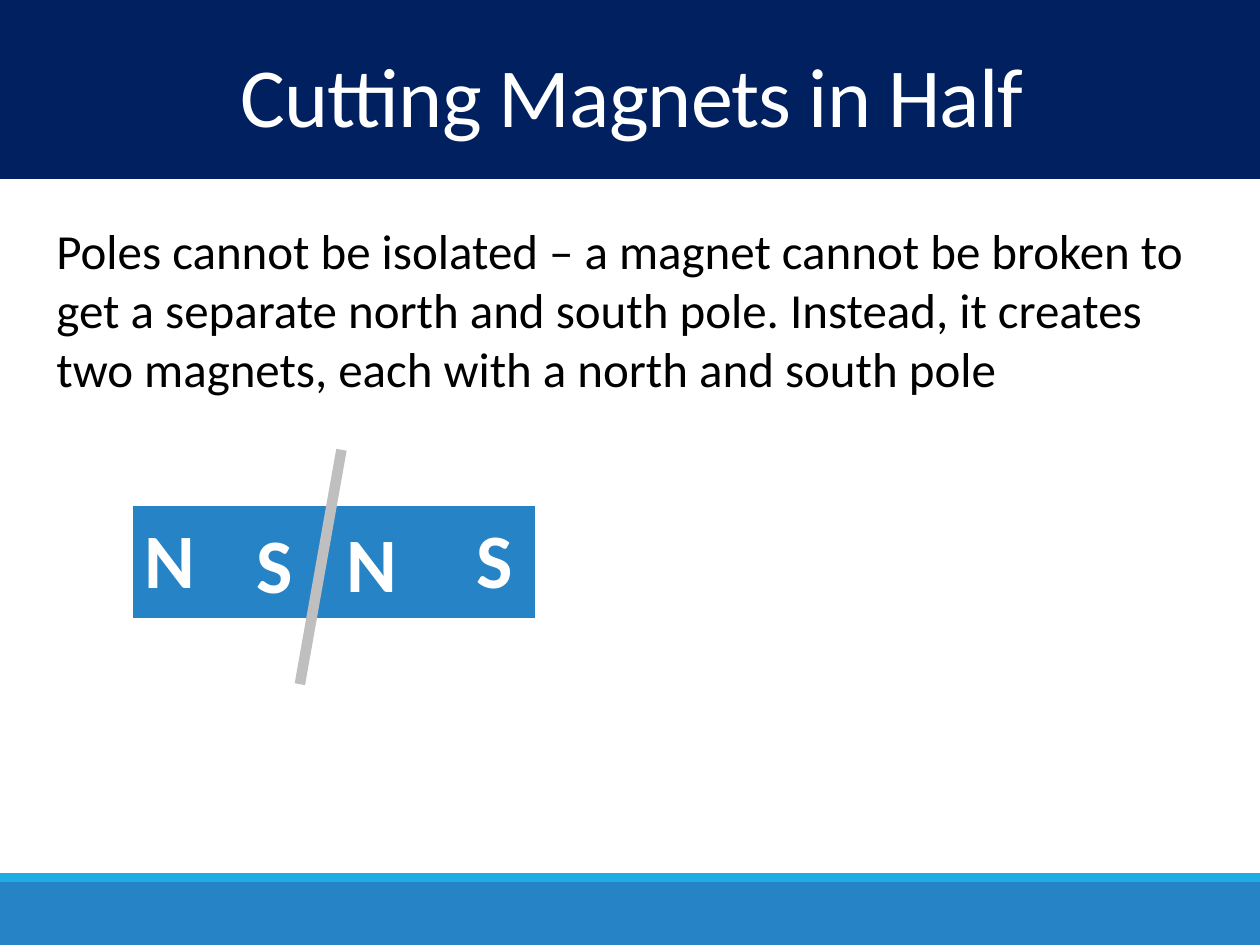
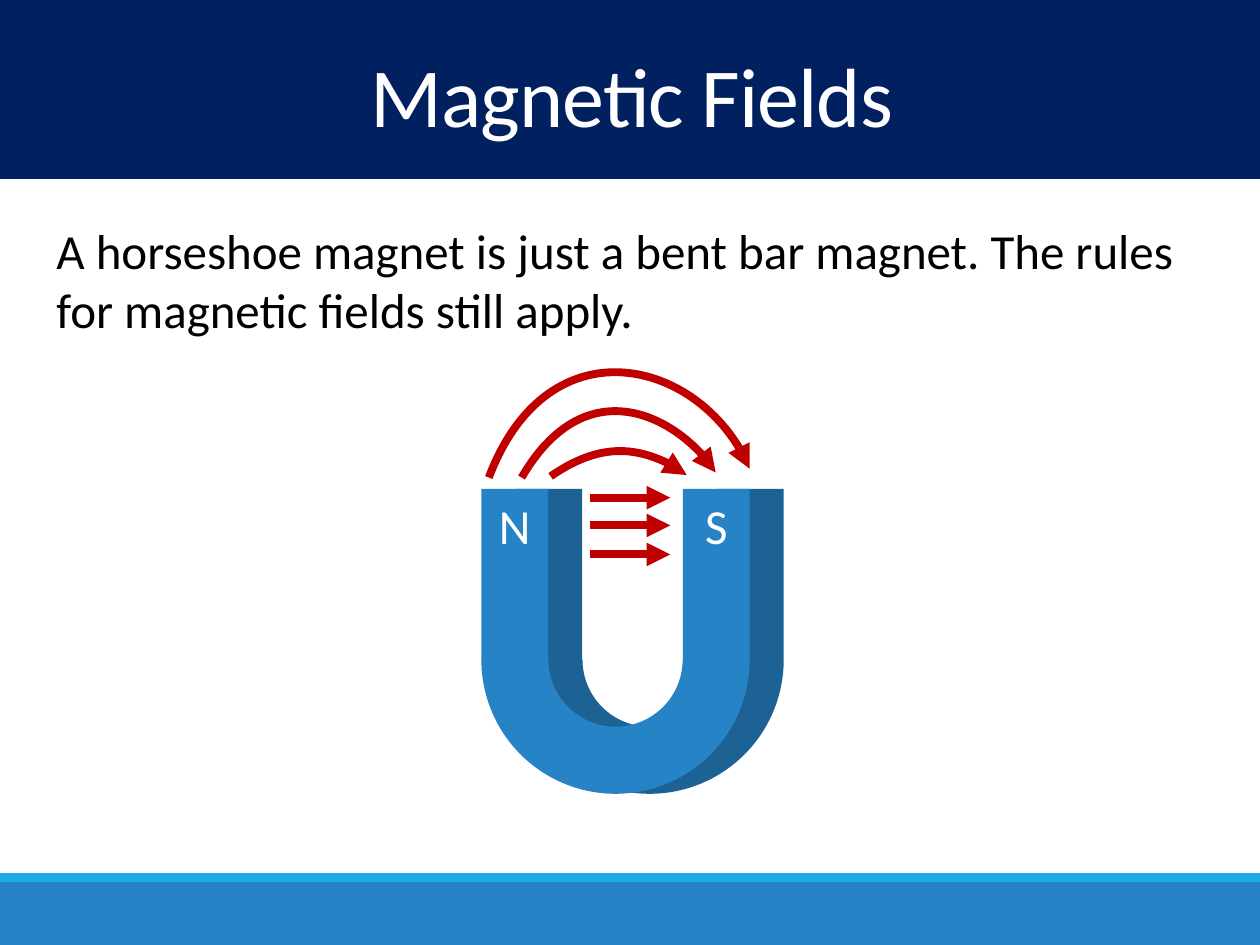
"""Builds two slides on cutting magnets in half and on magnetic fields."""
from dataclasses import dataclass

from lxml.etree import SubElement
from pptx import Presentation
from pptx.dml.color import RGBColor
from pptx.enum.shapes import MSO_CONNECTOR, MSO_SHAPE
from pptx.enum.text import MSO_ANCHOR, PP_ALIGN
from pptx.oxml import parse_xml
from pptx.oxml.ns import nsdecls, qn
from pptx.util import Emu, Pt

PX = 9144
WIDTH, HEIGHT = 1000, 750


@dataclass(frozen=True)
class Theme:
    font: str = "Calibri"
    navy: str = "002060"
    blue: str = "2683C6"
    shade: str = "1D6294"
    cyan: str = "1CADE4"
    cut: str = "BFBFBF"
    field: str = "C00000"
    white: str = "FFFFFF"
    black: str = "000000"
    title_size: int = 48
    pole_size: int = 44
    body_size: int = 28
    cut_width: float = 6
    field_width: float = 4.5


def px(*lengths):
    return [Emu(length * PX) for length in lengths]


class Deck:
    def __init__(self, theme):
        self.theme = theme
        self.file = Presentation()
        self.file.slide_width, self.file.slide_height = px(WIDTH, HEIGHT)
        self.slide = None

    def new_slide(self, title, body):
        theme = self.theme
        self.slide = self.file.slides.add_slide(self.file.slide_layouts[6])
        self.block((0, 700, WIDTH, 50), theme.blue)
        self.block((0, 693, WIDTH, 7), theme.cyan)
        self.block((0, 0, WIDTH, 142), theme.navy)
        heading = self.text((3, 42, 997, 84), title, theme.title_size, theme.white,
                            align=PP_ALIGN.CENTER)
        heading.line_spacing = 0.85
        heading.runs[0]._r.get_or_add_rPr().set("spc", "-50")
        self.text((35, 170, 924, 151), body, theme.body_size, theme.black)

    def add_words(self, paragraph, words, size, color, bold=False, align=PP_ALIGN.LEFT):
        paragraph.alignment = align
        run = paragraph.add_run()
        run.text = words
        run.font.name = self.theme.font
        run.font.size = Pt(size)
        run.font.bold = bold
        run.font.color.rgb = RGBColor.from_string(color)
        return paragraph

    def text(self, box, words, size, color, wrap=True, **style):
        frame = self.slide.shapes.add_textbox(*px(*box)).text_frame
        frame.word_wrap = wrap
        return self.add_words(frame.paragraphs[0], words, size, color, **style)

    def block(self, box, color, preset=MSO_SHAPE.RECTANGLE, turn=0, label=None):
        shape = self.slide.shapes.add_shape(preset, *px(*box))
        shape.shadow.inherit = False
        shape.rotation = turn
        shape.fill.solid()
        shape.fill.fore_color.rgb = RGBColor.from_string(color)
        shape.line.fill.background()
        if label:
            shape.text_frame.vertical_anchor = MSO_ANCHOR.TOP
            self.add_words(shape.text_frame.paragraphs[0], label, self.theme.body_size,
                           self.theme.white, align=PP_ALIGN.CENTER)

    def stroke(self, shape, color, width, arrow):
        shape.line.color.rgb = RGBColor.from_string(color)
        shape.line.width = Pt(width)
        if arrow:
            outline = shape._element.spPr.find(qn("a:ln"))
            SubElement(outline, qn("a:tailEnd"), type="triangle")

    def line(self, start, end, color, width, arrow=False):
        line = self.slide.shapes.add_connector(MSO_CONNECTOR.STRAIGHT, *px(*start, *end))
        self.stroke(line, color, width, arrow)
        SubElement(line._element.spPr, qn("a:effectLst"))

    def curve(self, start, controls, end, peak):
        builder = self.slide.shapes.build_freeform(*px(*start), scale=1.0)
        builder.add_line_segments([px(start[0], peak), px(*end)], close=False)
        curve = builder.convert_to_shape()
        curve.shadow.inherit = False
        curve.fill.background()
        self.stroke(curve, self.theme.field, self.theme.field_width, True)
        outline = next(curve._element.iter(qn("a:path")))
        for segment in outline.findall(qn("a:lnTo")):
            outline.remove(segment)
        bend = SubElement(outline, qn("a:cubicBezTo"))
        for x, y in (*controls, end):
            SubElement(bend, qn("a:pt"), x=str(x * PX - curve.left),
                       y=str(y * PX - curve.top))

    def bar_magnet(self, box, poles, tab):
        theme = self.theme
        table = self.slide.shapes.add_table(1, 1, *px(*box)).table
        table.first_row = table.horz_banding = False
        cell = table.cell(0, 0)
        borders = cell._tc.get_or_add_tcPr()
        for side, width in (("L", 1), ("R", 1), ("T", 1), ("B", 3)):
            borders.append(parse_xml(
                f'<a:ln{side} {nsdecls("a")} w="{Pt(width)}"><a:solidFill>'
                f'<a:srgbClr val="{theme.white}"/></a:solidFill></a:ln{side}>'))
        cell.fill.solid()
        cell.fill.fore_color.rgb = RGBColor.from_string(theme.blue)
        cell.vertical_anchor = MSO_ANCHOR.MIDDLE
        paragraph = self.add_words(cell.text_frame.paragraphs[0], "\t".join(poles),
                                   theme.pole_size, theme.white, bold=True)
        stops = SubElement(paragraph._p.get_or_add_pPr(), qn("a:tabLst"))
        SubElement(stops, qn("a:tab"), pos=str(tab * PX), algn="l")


def cutting_magnets(deck):
    theme = deck.theme
    deck.new_slide(
        "Cutting Magnets in Half",
        "Poles cannot be isolated – a magnet cannot be broken to get a separate north "
        "and south pole. Instead, it creates two magnets, each with a north and south pole")
    deck.bar_magnet((105, 401, 320, 91), "NS", tab=263)
    deck.line((271, 357), (238, 543), theme.cut, theme.cut_width)
    for pole, box in (("N", (265, 404, 61, 84)), ("S", (194, 405, 48, 84))):
        deck.text(box, pole, theme.pole_size, theme.white, wrap=False, bold=True)


def magnetic_fields(deck):
    theme = deck.theme
    deck.new_slide(
        "Magnetic Fields",
        "A horseshoe magnet is just a bent bar magnet. The rules for magnetic fields "
        "still apply.")
    span, leg = 213, 53
    for left, color, poles in ((409, theme.shade, (None, None)), (382, theme.blue, "NS")):
        deck.block((left, 417, span, span), color, MSO_SHAPE.BLOCK_ARC, turn=180)
        for x, pole in zip((left, left + span - leg), poles):
            deck.block((x, 388, leg, 136), color, label=pole)
    for y in (395, 417, 440):
        deck.line((468, y), (532, y), theme.field, theme.field_width, arrow=True)
    deck.curve((437, 378), ((476, 351), (519, 356)), (545, 377), peak=359)
    deck.curve((414, 379), ((460, 300), (539, 328)), (568, 375), peak=330)
    deck.curve((388, 379), ((433, 260), (559, 285)), (595, 372), peak=298)


def main():
    deck = Deck(Theme())
    cutting_magnets(deck)
    magnetic_fields(deck)
    deck.file.save("out.pptx")


if __name__ == "__main__":
    main()
